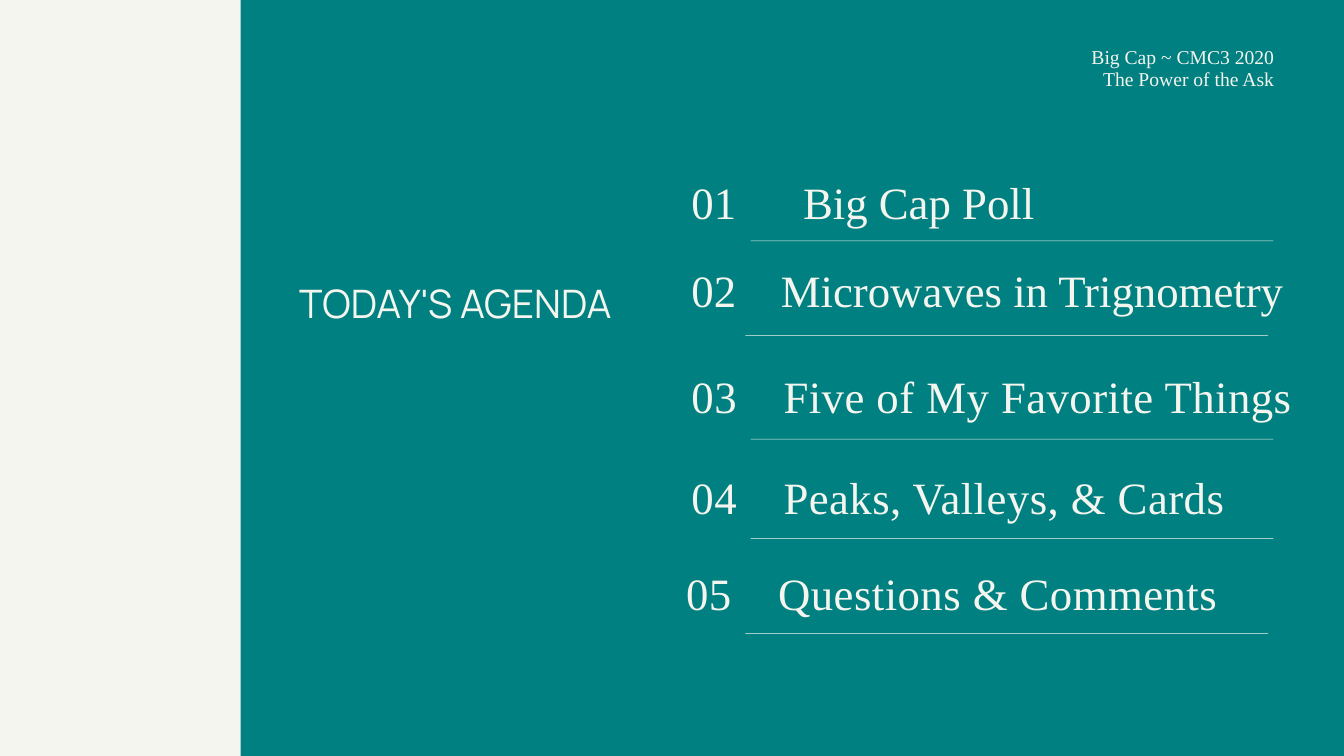
from pptx import Presentation
from pptx.dml.color import RGBColor
from pptx.enum.shapes import MSO_SHAPE as Shape
from pptx.enum.text import MSO_ANCHOR as Anchor, MSO_AUTO_SIZE as AutoSize, PP_ALIGN as Align
from pptx.oxml.ns import qn
from pptx.util import Inches, Pt
from lxml.etree import SubElement

WIDTH, HEIGHT = 20, 11.25
COLORS = {"background": "008080", "cream": "F5F5EF"}
NUMBER_LEFT = 10.29
RULE_INDENT, RULE_LENGTH = 0.88, 7.78

# number, topic, shift of the row, text top, rule top, tab stop, letter spacing
AGENDA = [
    ("01", "Big Cap Poll", 0, 2.46, 3.58, 1.66, 0),
    ("02", "Microwaves in Trignometry", 0, 3.77, 4.99, 1.33, 0),
    ("03", "Five of My Favorite Things", 0, 5.36, 6.53, 1.37, 0.5),
    ("04", "Peaks, Valleys, & Cards", 0, 6.86, 8.01, 1.37, 0.5),
    ("05", "Questions & Comments", -0.08, 8.28, 9.42, 1.37, 0.5),
]
RULE_SHIFTS = {"02": -0.08}  # this rule starts left of its row


def color(name):
    return RGBColor.from_string(COLORS[name])


def add_bar(slide, left, top, width, height):
    bar = slide.shapes.add_shape(
        Shape.RECTANGLE, Inches(left), Inches(top), Inches(width), Inches(height))
    bar.shadow.inherit = False
    bar.fill.solid()
    bar.fill.fore_color.rgb = color("cream")
    bar.line.fill.background()


def add_textbox(slide, left, top, width, height):
    return slide.shapes.add_textbox(
        Inches(left), Inches(top), Inches(width), Inches(height))


def write(shape, text, size, line_spacing, font="Times New Roman",
          align=Align.LEFT, tab=None, letter_spacing=0):
    frame = shape.text_frame
    frame.text = text
    frame.word_wrap = True
    frame.auto_size = AutoSize.NONE
    frame.vertical_anchor = Anchor.TOP
    frame.margin_left = frame.margin_right = frame.margin_top = frame.margin_bottom = 0
    for paragraph in frame.paragraphs:
        paragraph.alignment = align
        paragraph.line_spacing = Pt(line_spacing)
        if tab:
            tabs = SubElement(paragraph._p.get_or_add_pPr(), qn("a:tabLst"))
            SubElement(tabs, qn("a:tab"), pos=str(Inches(tab)), algn="l")
        for run in paragraph.runs:
            run.font.name = font
            run.font.size = Pt(size)
            run.font.color.rgb = color("cream")
            if letter_spacing:
                run._r.get_or_add_rPr().set("spc", str(int(letter_spacing * 100)))


def add_title(slide, text):
    title = slide.shapes.title
    title.left, title.top = Inches(4.45), Inches(4.21)
    title.width, title.height = Inches(5.55), Inches(0.6)
    write(title, text, 42, 46.2, font="Manrope")


def add_agenda_row(slide, number, topic, shift, text_top, rule_top, tab, letter_spacing):
    left = NUMBER_LEFT + shift
    box = add_textbox(slide, left, text_top, 9.2, 0.9)
    write(box, f"{number}\t{topic}", 48, 67.2, tab=tab, letter_spacing=letter_spacing)
    rule_left = left + RULE_INDENT + RULE_SHIFTS.get(number, 0)
    add_bar(slide, rule_left, rule_top, RULE_LENGTH, 0.01)


def main():
    presentation = Presentation()
    presentation.slide_width, presentation.slide_height = Inches(WIDTH), Inches(HEIGHT)
    slide = presentation.slides.add_slide(presentation.slide_layouts[5])
    slide.background.fill.solid()
    slide.background.fill.fore_color.rgb = color("background")

    # Side panel and title
    add_bar(slide, 0, 0, 3.58, HEIGHT)
    add_title(slide, "TODAY'S AGENDA")

    # Event name in the corner
    event = add_textbox(slide, 13.65, 0.7, 5.31, 0.63)
    write(event, "Big Cap ~ CMC3 2020\nThe Power of the Ask", 21, 23.1, align=Align.RIGHT)

    # Numbered agenda
    for row in AGENDA:
        add_agenda_row(slide, *row)

    presentation.save("out.pptx")


if __name__ == "__main__":
    main()
